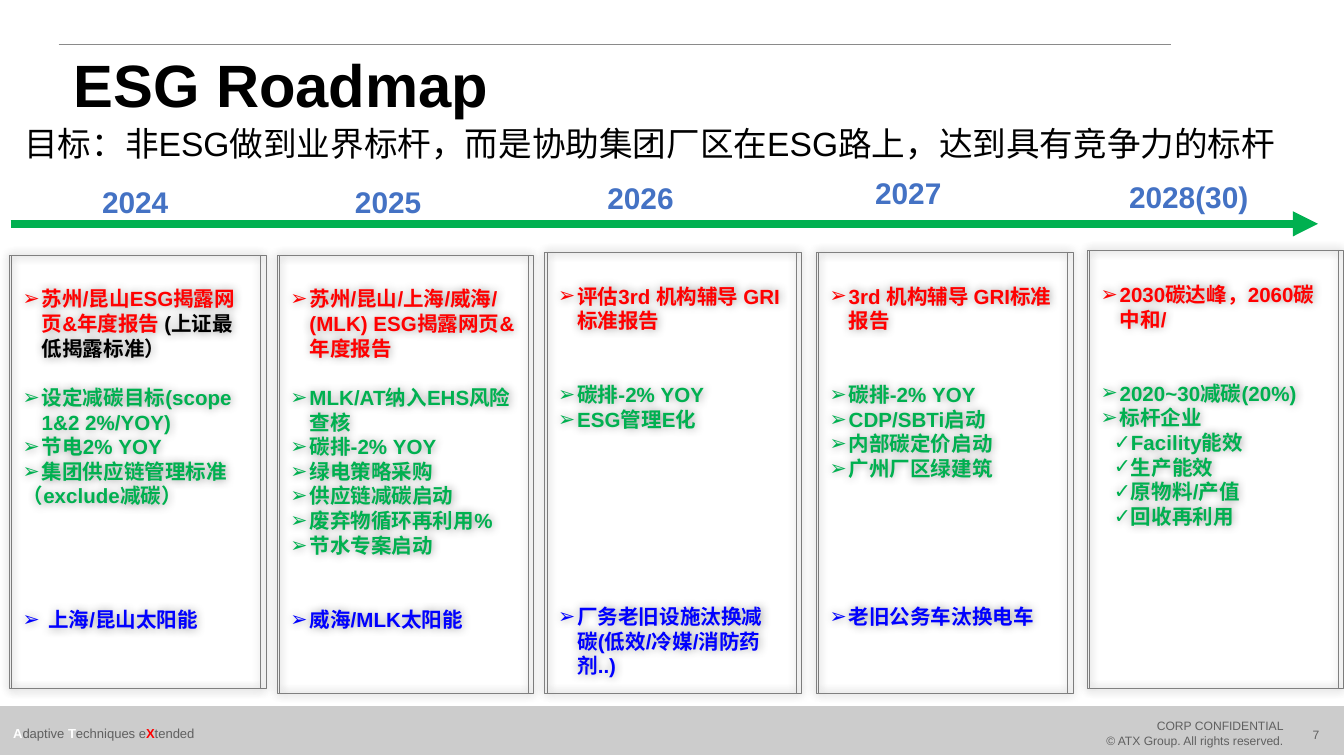
import pptx
import pptx.util
import pptx.dml.color
import pptx.enum.shapes
import pptx.enum.text
import pptx.oxml
import pptx.oxml.ns
from lxml import etree

Cm = pptx.util.Cm
Pt = pptx.util.Pt
RGBColor = pptx.dml.color.RGBColor
ALIGN = pptx.enum.text.PP_ALIGN
ANCHOR = pptx.enum.text.MSO_ANCHOR
SHAPE = pptx.enum.shapes.MSO_SHAPE
STRAIGHT = pptx.enum.shapes.MSO_CONNECTOR.STRAIGHT
qn = pptx.oxml.ns.qn

BLACK = RGBColor(0x00, 0x00, 0x00)
WHITE = RGBColor(0xFF, 0xFF, 0xFF)
RED = RGBColor(0xFF, 0x00, 0x00)
GREEN = RGBColor(0x00, 0xB0, 0x50)
BLUE = RGBColor(0x00, 0x00, 0xFF)
YEAR_BLUE = RGBColor(0x44, 0x72, 0xC4)
BAR_GREY = RGBColor(0xCC, 0xCC, 0xCC)
TEXT_GREY = RGBColor(0x60, 0x60, 0x60)
RULE_GREY = RGBColor(0x8A, 0x8A, 0x8A)
CARD_GREY = RGBColor(0x80, 0x80, 0x80)

LINE = 13.2  # line height in cards, pt
ARROW = ("➢", 0.36, -0.36)
WIDE_ARROW = ("➢", 0.48, -0.48)
CHECK = ("✓", 0.48, -0.23)

TITLE = "ESG Roadmap"
GOAL = "目标：非ESG做到业界标杆，而是协助集团厂区在ESG路上，达到具有竞争力的标杆"

# Items: (empty lines before, colour, text or runs, bullet if not ARROW)
CARDS = [
    {"year": "2024", "year_at": (1.73, 3.38, 1.65), "box": (0.18, 4.82, 8.2), "items": [
        (0, RED, [("苏州/昆山ESG揭露网页&年度报告 ", {}),
                  ("(上证最低揭露标准）", {"color": BLACK})]),
        (1, GREEN, "设定减碳目标(scope 1&2 2%/YOY)"),
        (0, GREEN, "节电2% YOY"),
        (0, GREEN, "集团供应链管理标准"),
        (0, GREEN, "（exclude减碳）", None),
        (4, BLUE, "上海/昆山太阳能", WIDE_ARROW)]},
    {"year": "2025", "year_at": (6.51, 3.38, 1.65), "box": (5.24, 4.82, 8.28), "items": [
        (0, RED, "苏州/昆山/上海/威海/(MLK) ESG揭露网页&年度报告"),
        (1, GREEN, "MLK/AT纳入EHS风险查核"),
        (0, GREEN, "碳排-2% YOY"),
        (0, GREEN, "绿电策略采购"),
        (0, GREEN, "供应链减碳启动"),
        (0, GREEN, "废弃物循环再利用%"),
        (0, GREEN, "节水专案启动"),
        (2, BLUE, "威海/MLK太阳能")]},
    {"year": "2026", "year_at": (11.28, 3.3, 1.65), "box": (10.3, 4.77, 8.33), "items": [
        (0, RED, "评估3rd 机构辅导 GRI标准报告"),
        (2, GREEN, "碳排-2% YOY"),
        (0, GREEN, "ESG管理E化"),
        (7, BLUE, "厂务老旧设施汰换减碳(低效/冷媒/消防药剂..)")]},
    {"year": "2027", "year_at": (16.34, 3.2, 1.65), "box": (15.43, 4.77, 8.33), "items": [
        (0, RED, "3rd 机构辅导 GRI标准报告"),
        (2, GREEN, "碳排-2% YOY"),
        (0, GREEN, "CDP/SBTi启动"),
        (0, GREEN, "内部碳定价启动"),
        (0, GREEN, "广州厂区绿建筑"),
        (5, BLUE, "老旧公务车汰换电车")]},
    {"year": "2028(30)", "year_at": (21.13, 3.27, 2.67), "box": (20.55, 4.74, 8.28), "items": [
        (0, RED, "2030碳达峰，2060碳中和/"),
        (2, GREEN, "2020~30减碳(20%)"),
        (0, GREEN, "标杆企业"),
        (0, GREEN, "Facility能效", CHECK),
        (0, GREEN, "生产能效", CHECK),
        (0, GREEN, "原物料/产值", CHECK),
        (0, GREEN, "回收再利用", CHECK)]},
]

INITIAL = {"color": WHITE, "bold": True}
TAGLINE = [("A", INITIAL), ("daptive ", {}), ("T", INITIAL), ("echniques e", {}),
           ("X", {"color": RED, "bold": True}), ("tended", {})]


def write(p, text, size=11, color=BLACK, bold=False, align=ALIGN.LEFT):
    """Fill a paragraph from a string or a list of (text, overrides)."""
    p.alignment = align
    for part, own in ([(text, {})] if isinstance(text, str) else text):
        r = p.add_run()
        r.text = part
        r.font.name = "Arial"
        r.font.size = Pt(size)
        r.font.bold = own.get("bold", bold)
        r.font.color.rgb = own.get("color", color)


def add_text(s, box, lines, wrap=True, anchor=ANCHOR.TOP, inset=(0.25, 0.13), **fmt):
    tf = s.shapes.add_textbox(*map(Cm, box)).text_frame
    tf.word_wrap = wrap
    tf.vertical_anchor = anchor
    tf.margin_left = tf.margin_right = Cm(inset[0])
    tf.margin_top = tf.margin_bottom = Cm(inset[1])
    for i, line in enumerate(lines):
        write(tf.add_paragraph() if i else tf.paragraphs[0], line, **fmt)


def add_line(s, ends, color, width, arrow=False):
    c = s.shapes.add_connector(STRAIGHT, *map(Cm, ends))
    c.line.color.rgb = color
    c.line.width = Pt(width)
    if arrow:
        etree.SubElement(c.line._get_or_add_ln(), qn("a:tailEnd"), type="triangle")
    etree.SubElement(c._element.spPr, qn("a:effectLst"))


def add_frame(s, *box):
    """Unfilled rectangle with a soft glow-like shadow."""
    sp = s.shapes.add_shape(SHAPE.RECTANGLE, *map(Cm, box))
    sp.fill.background()
    sp.line.color.rgb = CARD_GREY
    sp.line.width = Pt(0.5)
    sp.shadow.inherit = False
    effects = sp._element.spPr.find(qn("a:effectLst"))
    shadow = etree.SubElement(effects, qn("a:outerShdw"), blurRad=str(Pt(5)), dist="0",
                              dir="0", algn="ctr", rotWithShape="0")
    black = etree.SubElement(shadow, qn("a:srgbClr"), val="000000")
    etree.SubElement(black, qn("a:alpha"), val="40000")
    return sp


def set_bullet(p, char, left, indent):
    pPr = p._p.get_or_add_pPr()
    pPr.set("marL", str(Cm(left)))
    pPr.set("indent", str(Cm(indent)))
    etree.SubElement(pPr, qn("a:buFont"), typeface="Arial")
    etree.SubElement(pPr, qn("a:buChar"), char=char)


def add_card(s, left, top, height, items):
    add_frame(s, left + 0.04, top, 4.81, height)
    tf = add_frame(s, left, top, 4.75, height).text_frame
    tf.word_wrap = True
    tf.vertical_anchor = ANCHOR.TOP
    tf.margin_left = tf.margin_right = Cm(0.25)
    tf.margin_top = Cm(0.59)
    for i, (gap, color, text, *own_bullet) in enumerate(items):
        p = tf.add_paragraph() if i else tf.paragraphs[0]
        p.line_spacing = Pt(LINE)
        if gap:
            p.space_before = Pt(gap * LINE)
        bullet = own_bullet[0] if own_bullet else ARROW
        if bullet:
            set_bullet(p, *bullet)
        write(p, text, color=color, bold=True)


def add_footer(s):
    bar = s.shapes.add_shape(SHAPE.RECTANGLE, *map(Cm, (0, 13.36, 25.4, 0.89)))
    bar.fill.solid()
    bar.fill.fore_color.rgb = BAR_GREY
    bar.line.color.rgb = BAR_GREY
    bar.shadow.inherit = False
    fmt = {"anchor": ANCHOR.MIDDLE, "color": TEXT_GREY}
    add_text(s, (24.16, 13.51, 1.42, 0.74), ["7"], size=6.5, align=ALIGN.CENTER, **fmt)
    add_text(s, (20.24, 13.46, 4.27, 0.79),
             ["CORP CONFIDENTIAL", "© ATX Group. All rights reserved."],
             size=6.5, align=ALIGN.RIGHT, **fmt)
    add_text(s, (0, 13.46, 4.85, 0.79), [TAGLINE], size=7, **fmt)


def main():
    prs = pptx.Presentation()
    prs.slide_width = Cm(25.4)
    prs.slide_height = prs.slide_width * 9 // 16
    s = prs.slides.add_slide(prs.slide_layouts[6])

    add_line(s, (1.11, 0.84, 22.13, 0.84), RULE_GREY, 0.5)
    add_footer(s)
    add_text(s, (1.14, 0.78, 19.84, 1.63), [TITLE], size=32, bold=True)
    add_text(s, (0.21, 2.2, 25.02, 1.02), [GOAL], wrap=False, size=18)
    add_line(s, (0.2, 4.23, 24.91, 4.23), GREEN, 4.5, arrow=True)
    for card in CARDS:
        left, top, width = card["year_at"]
        add_text(s, (left, top, width, 0.89), [card["year"]], wrap=False, inset=(0.18, 0.1),
                 size=16, color=YEAR_BLUE, bold=True, align=ALIGN.CENTER)
        add_card(s, *card["box"], card["items"])
    prs.save("out.pptx")


if __name__ == "__main__":
    main()
